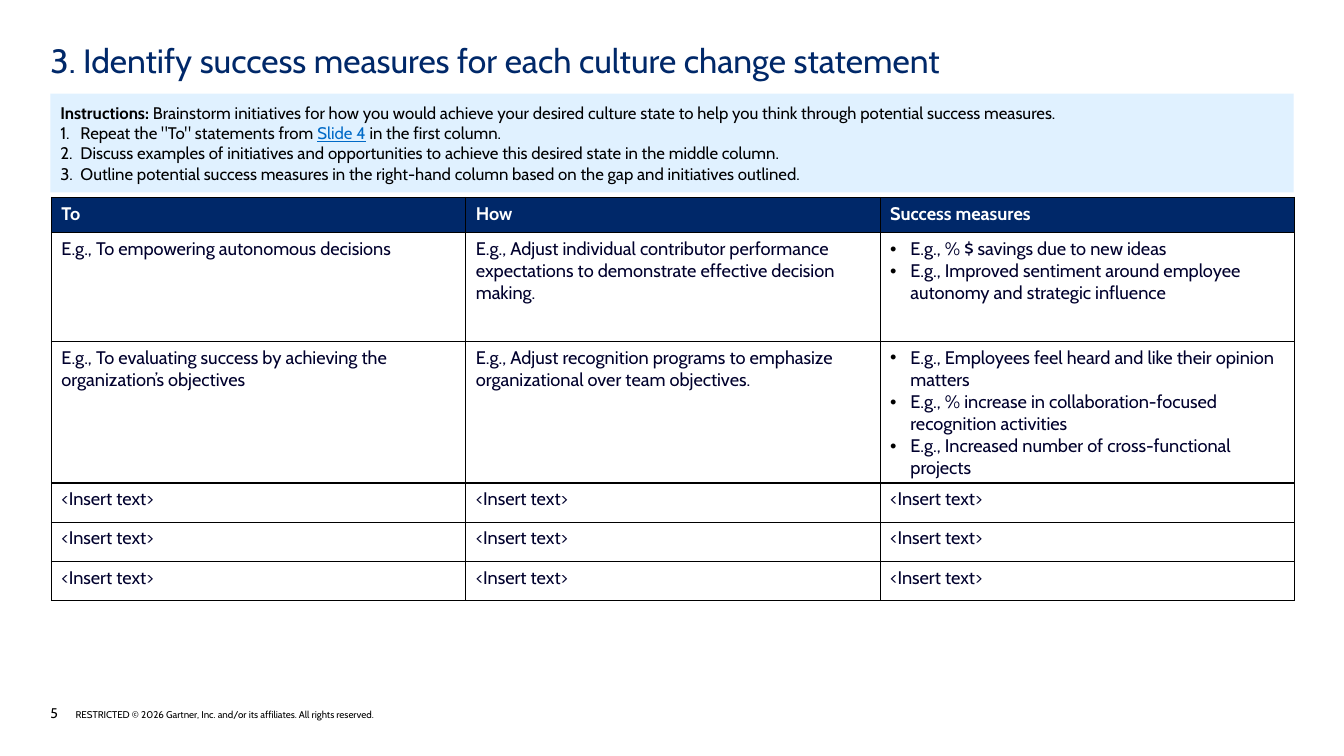
from dataclasses import dataclass

from lxml import etree
from pptx import Presentation, util as u
from pptx.dml.color import RGBColor
from pptx.enum import shapes, text
from pptx.oxml import ns

PX = 9144  # EMU per px, 100 px to the inch


@dataclass(frozen=True)
class Theme:
    font: str = "Cabin"
    navy: str = "002869"
    ink: str = "00002D"
    black: str = "000000"
    white: str = "FFFFFF"
    pale: str = "E0F1FF"
    link: str = "006AC7"
    title: int = 24
    table: int = 13
    body: int = 12
    page: int = 10
    legal: int = 7


T = Theme()


def px(*lengths):
    return [u.Emu(n * PX) for n in lengths]


def rgb(colour):
    return RGBColor.from_string(colour)


def sub(parent, tag, **attrs):
    return etree.SubElement(parent, ns.qn(tag), attrs)


def add_run(p, words, size, colour, bold=False, underline=False):
    r = p.add_run()
    r.text = words
    f = r.font
    f.name, f.size, f.bold, f.underline = T.font, u.Pt(size), bold, underline
    f.color.rgb = rgb(colour)


def hang(p, indent):
    pPr = p._p.get_or_add_pPr()
    pPr.set("marL", str(indent * PX))
    pPr.set("indent", str(-indent * PX))
    return pPr


def add_bullet(p, numbered=False):
    pPr = hang(p, 20)
    sub(sub(pPr, "a:buClr"), "a:srgbClr", val=T.black)
    if numbered:
        sub(pPr, "a:buFont", typeface="+mj-lt")
        sub(pPr, "a:buAutoNum", type="arabicPeriod")
    else:
        sub(pPr, "a:buFont", typeface="Arial")
        sub(pPr, "a:buChar", char="•")


def set_frame(tf, anchor, x_inset=0, y_inset=0):
    tf.word_wrap = True
    tf.vertical_anchor = anchor
    tf.margin_left = tf.margin_right = u.Emu(x_inset * PX)
    tf.margin_top = tf.margin_bottom = u.Emu(y_inset * PX)


def add_title(s, box, words):
    tf = s.shapes.add_textbox(*px(*box)).text_frame
    set_frame(tf, text.MSO_ANCHOR.TOP)
    add_run(tf.paragraphs[0], words, T.title, T.navy)


def add_instructions(s, box, lead, steps):
    sp = s.shapes.add_shape(shapes.MSO_SHAPE.RECTANGLE, *px(*box))
    sp.shadow.inherit = False
    sp.fill.solid()
    sp.fill.fore_color.rgb = rgb(T.pale)
    sp.line.fill.background()
    tf = sp.text_frame
    set_frame(tf, text.MSO_ANCHOR.MIDDLE, 10, 5)
    p = tf.paragraphs[0]
    p.alignment = text.PP_ALIGN.LEFT
    add_run(p, lead[0], T.body, T.black, bold=True)
    add_run(p, lead[1], T.body, T.black)
    for step in steps:
        p = tf.add_paragraph()
        p.alignment = text.PP_ALIGN.LEFT
        add_bullet(p, numbered=True)
        # Every second run of a step is a reference to another slide
        for i, words in enumerate(step):
            is_ref = i % 2 == 1
            add_run(p, words, T.body, T.link if is_ref else T.black, underline=is_ref)


def add_borders(cell):
    tcPr = cell._tc.get_or_add_tcPr()
    for i, side in enumerate("LRTB"):
        ln = etree.Element(ns.qn(f"a:ln{side}"), w=str(u.Pt(1)))
        sub(sub(ln, "a:solidFill"), "a:srgbClr", val=T.black)
        tcPr.insert(i, ln)


def add_measures_table(s, box, heights, rows):
    x, y, col_width = box
    n_cols = len(rows[0])
    frame = s.shapes.add_table(len(rows), n_cols, *px(x, y, col_width * n_cols, sum(heights)))
    table = frame.table
    table.horz_banding = False
    for col in table.columns:
        col.width = u.Emu(col_width * PX)
    for i, (height, row) in enumerate(zip(heights, rows)):
        table.rows[i].height = u.Emu(height * PX)
        is_head = i == 0
        for j, content in enumerate(row):
            cell = table.cell(i, j)
            if is_head:
                cell.fill.solid()
                cell.fill.fore_color.rgb = rgb(T.navy)
            else:
                cell.fill.background()
            add_borders(cell)
            # A list becomes bullets, a string a plain paragraph
            is_list = isinstance(content, list)
            tf = cell.text_frame
            for k, words in enumerate(content if is_list else [content]):
                p = tf.add_paragraph() if k else tf.paragraphs[0]
                if is_list:
                    add_bullet(p)
                add_run(p, words, T.table, T.white if is_head else T.ink, bold=is_head)


def add_footer(s, box, number, legal):
    tf = s.shapes.add_textbox(*px(*box)).text_frame
    set_frame(tf, text.MSO_ANCHOR.BOTTOM)
    p = tf.paragraphs[0]
    hang(p, 25)
    add_run(p, number, T.page, T.black)
    add_run(p, "\t" + legal, T.legal, T.black)


TITLE = "3. Identify success measures for each culture change statement"
LEAD = ("Instructions: ",
        "Brainstorm initiatives for how you would achieve your desired culture state "
        "to help you think through potential success measures.")
STEPS = [
    ['Repeat the "To" statements from ', "Slide 4", " in the first column."],
    ["Discuss examples of initiatives and opportunities to achieve this desired state "
     "in the middle column."],
    ["Outline potential success measures in the right-hand column based on the gap "
     "and initiatives outlined."],
]
ROWS = [
    ["To", "How", "Success measures"],
    ["E.g., To empowering autonomous decisions",
     "E.g., Adjust individual contributor performance expectations to demonstrate "
     "effective decision making.",
     ["E.g., % $ savings due to new ideas",
      "E.g., Improved sentiment around employee autonomy and strategic influence"]],
    ["E.g., To evaluating success by achieving the organization’s objectives",
     "E.g., Adjust recognition programs to emphasize organizational over team objectives.",
     ["E.g., Employees feel heard and like their opinion matters",
      "E.g., % increase in collaboration-focused recognition activities",
      "E.g., Increased number of cross-functional projects"]],
] + [["<Insert text>"] * 3] * 3
LEGAL = "RESTRICTED © 2026 Gartner, Inc. and/or its affiliates. All rights reserved."


def main():
    prs = Presentation()
    prs.slide_width, prs.slide_height = px(1333, 750)
    s = prs.slides.add_slide(prs.slide_layouts[6])
    add_footer(s, (50, 699, 799, 17), "5", LEGAL)
    add_title(s, (50, 40, 1233, 49), TITLE)
    add_measures_table(s, (51, 196, 411), [35, 108, 113, 39, 39, 39], ROWS)
    add_instructions(s, (50, 93, 1233, 98), LEAD, STEPS)
    prs.save("out.pptx")


if __name__ == "__main__":
    main()
